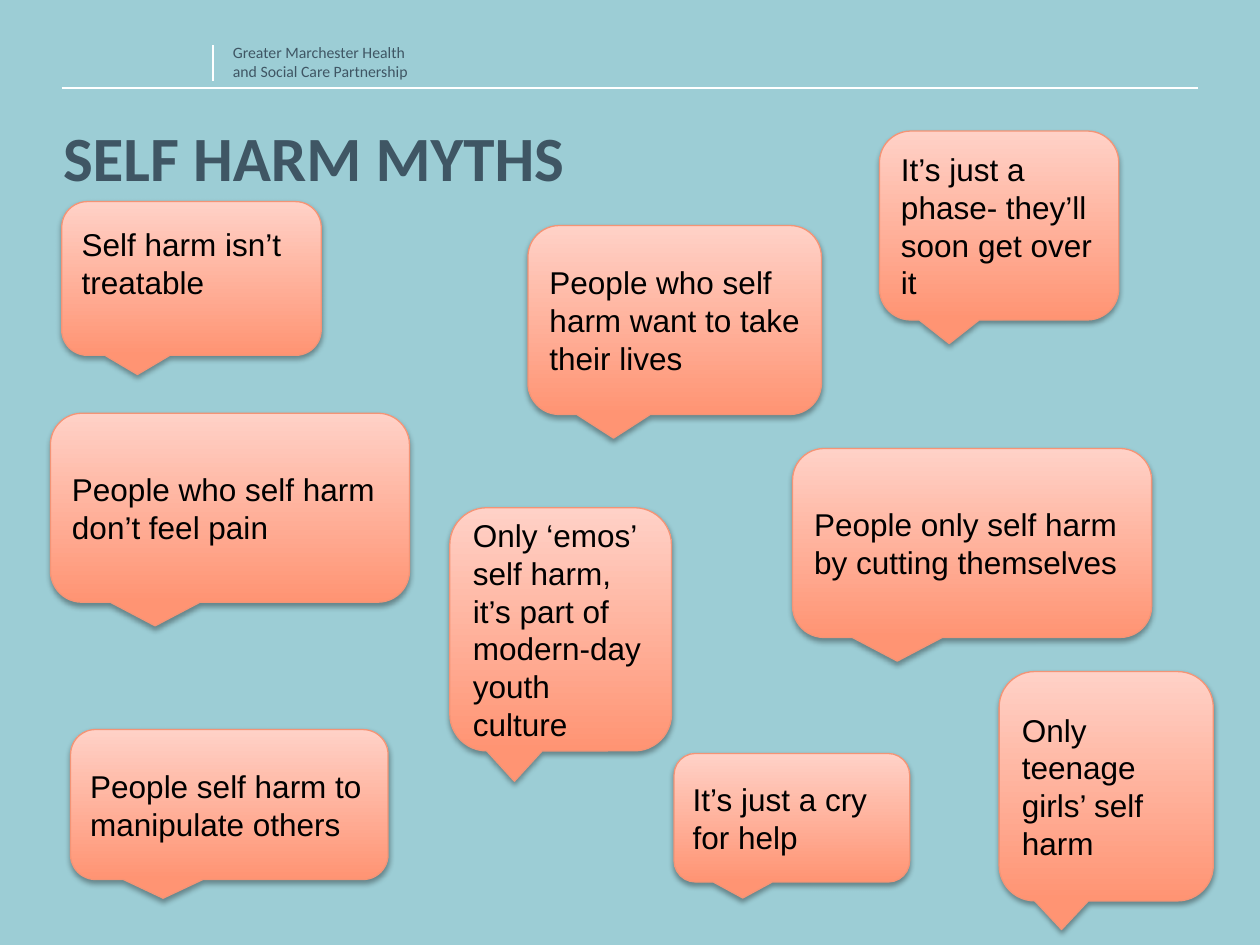
import pptx
import pptx.util
import pptx.dml.color
import pptx.enum.shapes
import pptx.enum.text
import pptx.oxml
import pptx.oxml.ns

Inches = pptx.util.Inches
Pt = pptx.util.Pt
middle = pptx.enum.text.MSO_ANCHOR.MIDDLE
left = pptx.enum.text.PP_ALIGN.LEFT
slate = "3F5664"


def color(code):
    return pptx.dml.color.RGBColor.from_string(code)


def style(para, face, size, code):
    para.alignment = left
    para.font.name = face
    para.font.size = Pt(size)
    para.font.color.rgb = color(code)


deck = pptx.Presentation()
deck.slide_width = Inches(10)
deck.slide_height = Inches(7.5)
slide = deck.slides.add_slide(deck.slide_layouts[5])
slide.background.fill.solid()
slide.background.fill.fore_color.rgb = color("9CCDD5")

for x1, y1, x2, y2 in [(0.49, 0.7, 9.51, 0.7), (1.69, 0.64, 1.69, 0.36)]:
    rule = slide.shapes.add_connector(
        pptx.enum.shapes.MSO_CONNECTOR.STRAIGHT,
        Inches(x1), Inches(y1), Inches(x2), Inches(y2))
    rule.line.color.rgb = color("FFFFFF")
    rule.line.width = Pt(1)
    props = rule.element.spPr
    props.append(pptx.oxml.parse_xml(
        f'<a:effectLst {pptx.oxml.ns.nsdecls("a")}/>'))

header = slide.shapes.add_textbox(
    Inches(1.75), Inches(0.29), Inches(2.61), Inches(0.4)).text_frame
header.word_wrap = True
header.vertical_anchor = middle
header.text = "Greater Marchester Health\nand Social Care Partnership"
for para in header.paragraphs:
    style(para, "Calibri", 9, slate)

title = slide.shapes.title
title.left, title.top = Inches(0.4), Inches(0.76)
title.width, title.height = Inches(9), Inches(1.02)
frame = title.text_frame
frame.text = "SELF HARM MYTHS"
frame.auto_size = pptx.enum.text.MSO_AUTO_SIZE.NONE
frame.vertical_anchor = middle
para = frame.paragraphs[0]
style(para, "Calibri", 36, slate)
para.font.bold = True
para.line_spacing = Pt(39.2)

shadow = f"""<a:effectLst {pptx.oxml.ns.nsdecls("a")}>
  <a:outerShdw blurRad="{Pt(3.1)}" dist="{Pt(1.8)}" dir="5400000" rotWithShape="0">
    <a:srgbClr val="000000"><a:alpha val="35000"/></a:srgbClr>
  </a:outerShdw>
</a:effectLst>"""

myths = [
    (0.4, 3.28, 2.85, 1.5, 0.05, "People who self harm don’t feel pain"),
    (0.49, 1.6, 2.06, 1.22, 0.29, "Self harm isn’t treatable"),
    (5.35, 5.98, 1.87, 1.02, 0.05, "It’s just a cry for help"),
    (3.57, 4.03, 1.76, 1.93, 0.05,
     "Only ‘emos’ self harm, it’s part of modern-day youth culture"),
    (0.56, 5.79, 2.52, 1.19, 0.05, "People self harm to manipulate others"),
    (7.93, 5.33, 1.7, 1.82, 0.05, "Only teenage girls’ self harm"),
    (6.98, 1.04, 1.9, 1.5, 0.05, "It’s just a phase- they’ll soon get over it"),
    (4.19, 1.79, 2.33, 1.5, 0.05,
     "People who self harm want to take their lives"),
    (6.29, 3.56, 2.85, 1.5, 0.05, "People only self harm by cutting themselves"),
]
for x, y, wide, high, base, words in myths:
    bubble = slide.shapes.add_shape(
        pptx.enum.shapes.MSO_SHAPE.ROUNDED_RECTANGULAR_CALLOUT,
        Inches(x), Inches(y), Inches(wide), Inches(high))
    bubble.fill.gradient()
    bubble.fill.gradient_angle = 90
    for stop, place, code in zip(
            bubble.fill.gradient_stops, (0, 1), ("FF9473", "FFD1C7")):
        stop.position = place
        stop.color.rgb = color(code)
    bubble.line.color.rgb = color("F49476")
    bubble.line.width = Pt(0.75)
    bubble.element.spPr.append(pptx.oxml.parse_xml(shadow))
    frame = bubble.text_frame
    frame.word_wrap = True
    frame.vertical_anchor = middle
    frame.margin_bottom = Inches(base)
    frame.text = words
    style(frame.paragraphs[0], "Arial", 18, "000000")

deck.save("out.pptx")
